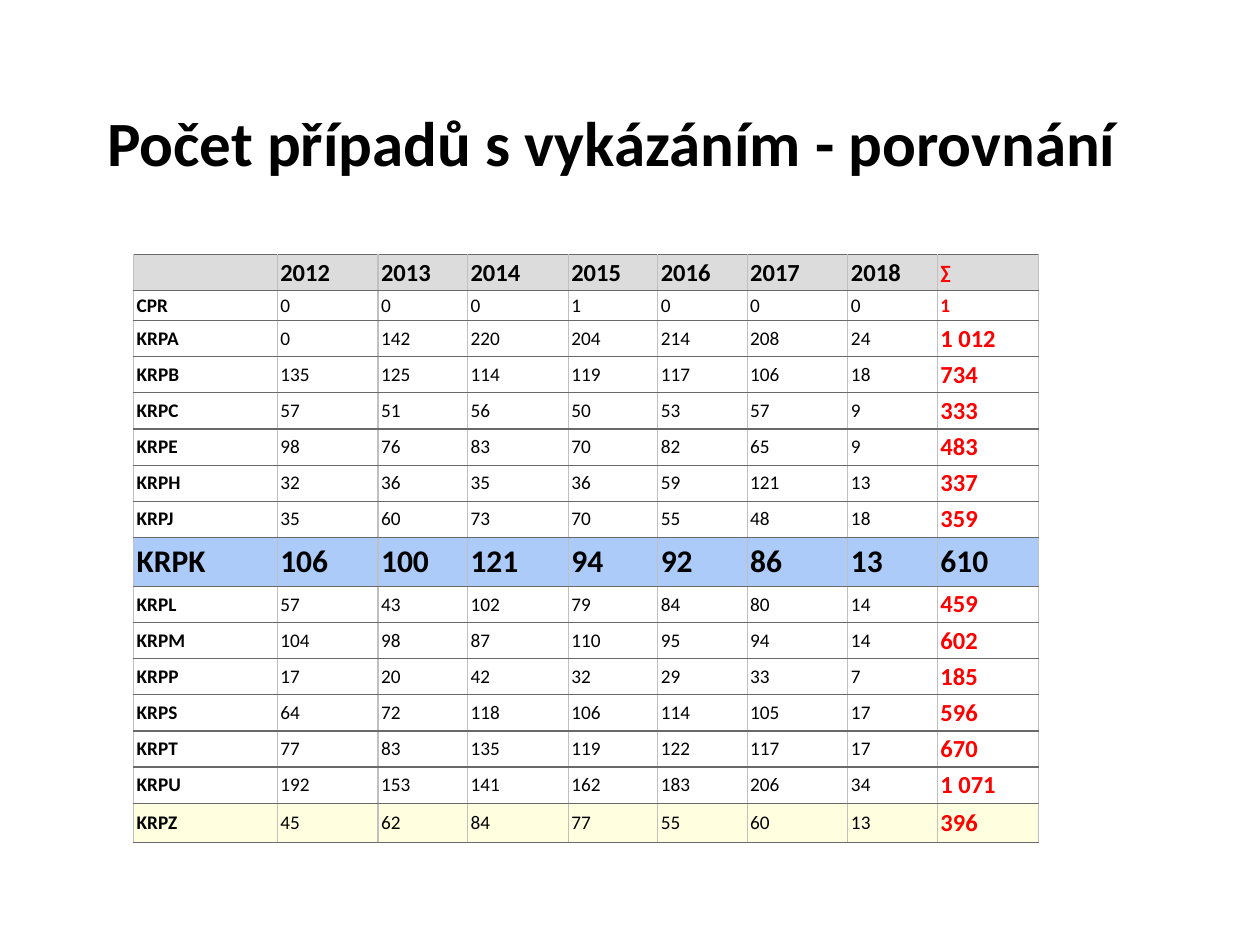
from dataclasses import dataclass

from lxml import etree
from pptx import Presentation
from pptx import util as u
from pptx.dml.color import RGBColor
from pptx.enum import text
from pptx.oxml import ns

COLORS = {
    "text": "000000",
    "total": "FF0000",
    "header": "DCDCDC",
    "plain": "FFFFFF",
    "highlight": "ACCBF9",
    "last": "FFFFE0",
    "side": "C0C0C0",
    "rule": "696969",
}
FONT = "Calibri"
TITLE = "Počet případů s vykázáním - porovnání"
YEARS = range(2012, 2019)
COLUMN_WIDTHS = [1.14, 0.8, 0.71, 0.8, 0.71, 0.71, 0.8, 0.71, 0.8]
CELL_MARGIN = u.Pt(1.8)
BORDERS = {"lnL": "side", "lnR": "side", "lnT": "rule", "lnB": "rule"}


@dataclass
class Region:
    name: str
    counts: list[int]
    total: int
    height: float = 0.27
    fill: str = "plain"
    total_size: int = 14


@dataclass
class CellStyle:
    size: int = 11
    bold: bool = False
    color: str = "text"
    fill: str = "plain"


REGIONS = [
    Region("CPR", [0, 0, 0, 1, 0, 0, 0], 1, height=0.23, total_size=11),
    Region("KRPA", [0, 142, 220, 204, 214, 208, 24], 1012),
    Region("KRPB", [135, 125, 114, 119, 117, 106, 18], 734),
    Region("KRPC", [57, 51, 56, 50, 53, 57, 9], 333),
    Region("KRPE", [98, 76, 83, 70, 82, 65, 9], 483),
    Region("KRPH", [32, 36, 35, 36, 59, 121, 13], 337),
    Region("KRPJ", [35, 60, 73, 70, 55, 48, 18], 359),
    Region("KRPK", [106, 100, 121, 94, 92, 86, 13], 610, height=0.39, fill="highlight"),
    Region("KRPL", [57, 43, 102, 79, 84, 80, 14], 459),
    Region("KRPM", [104, 98, 87, 110, 95, 94, 14], 602),
    Region("KRPP", [17, 20, 42, 32, 29, 33, 7], 185),
    Region("KRPS", [64, 72, 118, 106, 114, 105, 17], 596),
    Region("KRPT", [77, 83, 135, 119, 122, 117, 17], 670),
    Region("KRPU", [192, 153, 141, 162, 183, 206, 34], 1071),
    Region("KRPZ", [45, 62, 84, 77, 55, 60, 13], 396, height=0.31, fill="last"),
]


def rgb(name: str) -> RGBColor:
    return RGBColor.from_string(COLORS[name])


def format_paragraph(para, size: int, bold: bool, color: str) -> None:
    para.font.name = FONT
    para.font.size = u.Pt(size)
    para.font.bold = bold
    para.font.color.rgb = rgb(color)


def add_borders(cell) -> None:
    properties = cell._tc.get_or_add_tcPr()
    for position, (side, color) in enumerate(BORDERS.items()):
        line = etree.Element(ns.qn(f"a:{side}"), w=str(u.Pt(0.75)))
        fill = etree.SubElement(line, ns.qn("a:solidFill"))
        etree.SubElement(fill, ns.qn("a:srgbClr"), val=COLORS[color])
        properties.insert(position, line)


def fill_cell(cell, content: str, style: CellStyle) -> None:
    cell.margin_left = cell.margin_right = CELL_MARGIN
    cell.margin_top = cell.margin_bottom = CELL_MARGIN
    cell.vertical_anchor = text.MSO_ANCHOR.MIDDLE
    cell.fill.solid()
    cell.fill.fore_color.rgb = rgb(style.fill)
    add_borders(cell)
    para = cell.text_frame.paragraphs[0]
    if content:
        para.text = content
    else:
        para._p.get_or_add_endParaRPr().set("sz", str(style.size * 100))
    format_paragraph(para, style.size, style.bold, style.color)


def fill_row(table, row: int, contents: list[str], styles: list[CellStyle]) -> None:
    for column, (content, style) in enumerate(zip(contents, styles)):
        fill_cell(table.cell(row, column), content, style)


def region_styles(region: Region) -> list[CellStyle]:
    if region.fill == "highlight":
        return [CellStyle(18, True, fill=region.fill)] * len(COLUMN_WIDTHS)
    return [
        CellStyle(bold=True, fill=region.fill),
        *[CellStyle(fill=region.fill)] * len(YEARS),
        CellStyle(region.total_size, True, "total", region.fill),
    ]


def add_title(page) -> None:
    title = page.shapes.title
    title.left, title.top = u.Inches(0.75), u.Inches(0.77)
    title.width, title.height = u.Inches(8.84), u.Inches(0.78)
    frame = title.text_frame
    frame.text = TITLE
    frame.vertical_anchor = text.MSO_ANCHOR.MIDDLE
    frame.auto_size = text.MSO_AUTO_SIZE.NONE
    para = frame.paragraphs[0]
    para.alignment = text.PP_ALIGN.LEFT
    para.line_spacing = 0.9
    format_paragraph(para, 36, True, "text")


def add_case_table(page) -> None:
    heights = [0.27] + [region.height for region in REGIONS]
    table = page.shapes.add_table(
        len(heights), len(COLUMN_WIDTHS), u.Inches(1.06), u.Inches(2.02),
        u.Inches(sum(COLUMN_WIDTHS)), u.Inches(sum(heights)),
    ).table
    table.first_row = table.horz_banding = False
    for column, width in zip(table.columns, COLUMN_WIDTHS):
        column.width = u.Inches(width)
    for row, height in zip(table.rows, heights):
        row.height = u.Inches(height)

    header = [CellStyle(14, True, fill="header")] * (len(YEARS) + 1)
    header.append(CellStyle(11, True, "total", "header"))
    fill_row(table, 0, ["", *map(str, YEARS), "∑"], header)
    for row, region in enumerate(REGIONS, start=1):
        total = f"{region.total:,}".replace(",", " ")
        contents = [region.name, *map(str, region.counts), total]
        fill_row(table, row, contents, region_styles(region))


def main() -> None:
    deck = Presentation()
    deck.slide_width, deck.slide_height = u.Inches(10), u.Inches(7.5)
    page = deck.slides.add_slide(deck.slide_layouts[5])
    add_title(page)
    add_case_table(page)
    deck.save("out.pptx")


if __name__ == "__main__":
    main()
